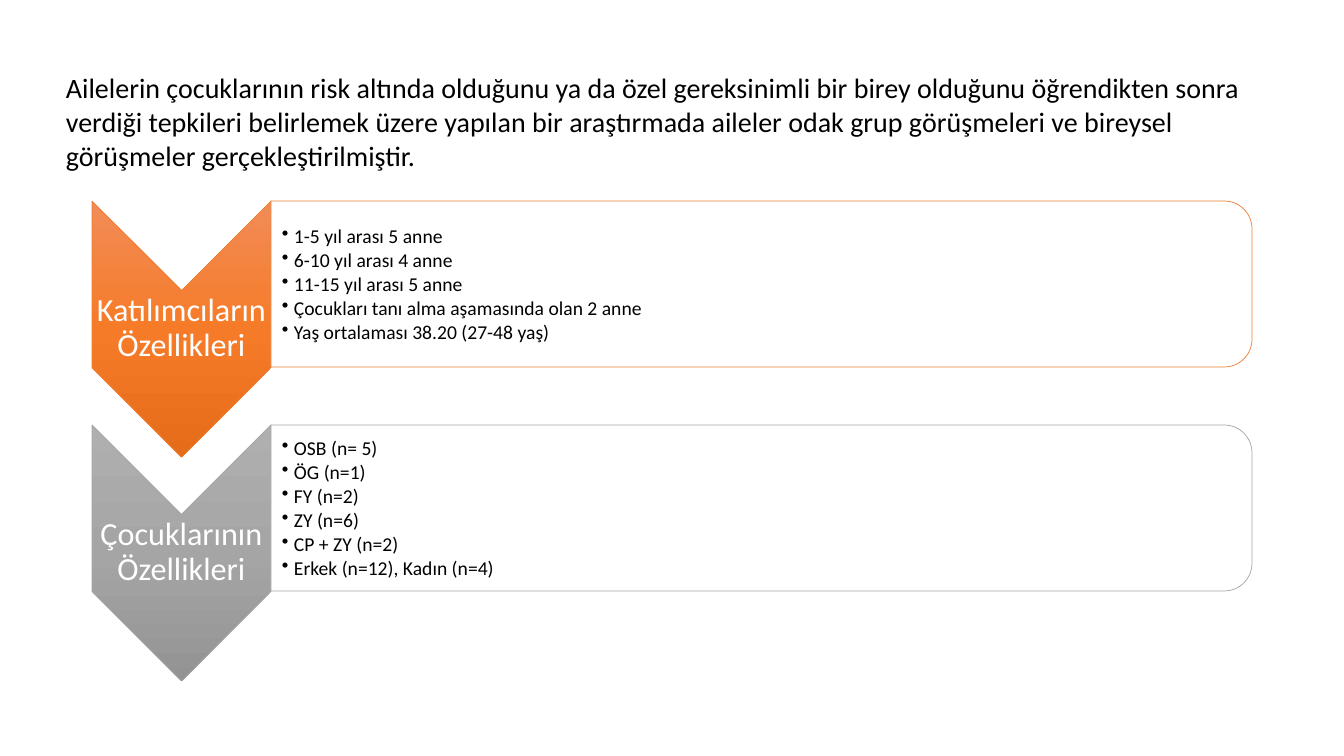
from dataclasses import dataclass

from lxml import etree
from pptx import Presentation
from pptx.dml.color import RGBColor
from pptx.enum.shapes import MSO_SHAPE
from pptx.enum.text import MSO_ANCHOR, PP_ALIGN
from pptx.oxml import parse_xml
from pptx.oxml.ns import nsdecls, qn
from pptx.util import Pt

EMU_PER_PX = 914400 / 100.8


@dataclass(frozen=True)
class Theme:
    font: str = "Calibri"
    black: str = "000000"
    white: str = "FFFFFF"
    orange: str = "ED7D31"
    gray: str = "A5A5A5"
    orange_stops: tuple = ("F18C57", "F67B28", "E56C19")
    gray_stops: tuple = ("AFAFAF", "A5A5A5", "939393")
    intro_size: int = 20
    label_size: int = 23
    item_size: int = 14


THEME = Theme()

INTRO = (
    "Ailelerin çocuklarının risk altında olduğunu ya da özel gereksinimli bir birey "
    "olduğunu öğrendikten sonra verdiği tepkileri belirlemek üzere yapılan bir araştırmada "
    "aileler odak grup görüşmeleri ve bireysel görüşmeler gerçekleştirilmiştir."
)
SECTIONS = [
    ("Katılımcıların Özellikleri", THEME.orange, THEME.orange_stops, [
        "1-5 yıl arası 5 anne",
        "6-10 yıl arası 4 anne",
        "11-15 yıl arası 5 anne",
        "Çocukları tanı alma aşamasında olan 2 anne",
        "Yaş ortalaması 38.20 (27-48 yaş)",
    ]),
    ("Çocuklarının Özellikleri", THEME.gray, THEME.gray_stops, [
        "OSB (n= 5)",
        "ÖG (n=1)",
        "FY (n=2)",
        "ZY (n=6)",
        "CP + ZY (n=2)",
        "Erkek (n=12), Kadın (n=4)",
    ]),
]

# Section grid, in px
LEFT, TOP, PITCH = 92, 201, 224
CHEVRON_W, CHEVRON_H = 179, 256
PANEL_W, PANEL_H = 981, 166


def px(n):
    return round(n * EMU_PER_PX)


def add_turned_shape(slide, kind, x, y, w, h, line_color):
    """Add a shape turned by 90 degrees that covers the box x, y, w, h."""
    shift = (w - h) / 2
    sp = slide.shapes.add_shape(kind, px(x + shift), px(y - shift), px(h), px(w))
    sp.rotation = 90
    sp.shadow.inherit = False
    sp.line.color.rgb = RGBColor.from_string(line_color)
    sp.line.width = Pt(0.5)
    return sp


def add_chevron(slide, x, y, line_color, stops):
    sp = add_turned_shape(slide, MSO_SHAPE.CHEVRON, x, y, CHEVRON_W, CHEVRON_H, line_color)
    marks = "".join(
        f'<a:gs pos="{i * 50000}"><a:srgbClr val="{color}"/></a:gs>'
        for i, color in enumerate(stops)
    )
    # Top-to-bottom gradient, independent of the shape's rotation
    grad = parse_xml(
        f'<a:gradFill {nsdecls("a")} rotWithShape="0"><a:gsLst>{marks}</a:gsLst>'
        '<a:lin ang="5400000" scaled="0"/></a:gradFill>'
    )
    sp.fill.background()
    no_fill = sp._element.spPr.find(qn("a:noFill"))
    no_fill.getparent().replace(no_fill, grad)


def add_panel(slide, x, y, line_color):
    sp = add_turned_shape(slide, MSO_SHAPE.ROUND_2_SAME_RECTANGLE, x, y,
                          PANEL_W, PANEL_H, line_color)
    sp.fill.solid()
    sp.fill.fore_color.rgb = RGBColor.from_string(THEME.white)
    color = sp._element.spPr.find(qn("a:solidFill"))[0]
    etree.SubElement(color, qn("a:alpha")).set("val", "90000")


def add_bullet(p, indent):
    pPr = p._p.get_or_add_pPr()
    pPr.set("marL", str(indent))
    pPr.set("indent", str(-indent))
    etree.SubElement(pPr, qn("a:buChar")).set("char", "•")


def add_text(slide, box, lines, size, color, insets=None, anchor=MSO_ANCHOR.TOP,
             align=PP_ALIGN.LEFT, spacing=None, after=None, bullets=False):
    tb = slide.shapes.add_textbox(*map(px, box))
    tf = tb.text_frame
    tf.word_wrap = True
    tf.vertical_anchor = anchor
    if insets:
        tf.margin_left, tf.margin_top, tf.margin_right, tf.margin_bottom = map(px, insets)
    tf.text = "\n".join(lines)
    for p in tf.paragraphs:
        if bullets:
            add_bullet(p, px(12))
        p.alignment = align
        p.line_spacing = spacing
        p.space_after = after
        for r in p.runs:
            r.font.name = THEME.font
            r.font.size = Pt(size)
            r.font.color.rgb = RGBColor.from_string(color)


def add_section(slide, y, label, line_color, stops, items):
    panel_x = LEFT + CHEVRON_W
    add_chevron(slide, LEFT, y, line_color, stops)
    add_text(slide, (LEFT, y + 89, CHEVRON_W, 77), [label], THEME.label_size, THEME.white,
             (2, 2, 2, 2), MSO_ANCHOR.MIDDLE, PP_ALIGN.CENTER, 0.9)
    add_panel(slide, panel_x, y, line_color)
    add_text(slide, (panel_x, y + 9, 973, 150), items, THEME.item_size, THEME.black,
             (11, 1, 1, 1), MSO_ANCHOR.MIDDLE, spacing=0.9, after=Pt(2), bullets=True)


def main():
    prs = Presentation()
    prs.slide_width, prs.slide_height = px(1344), px(756)
    slide = prs.slides.add_slide(prs.slide_layouts[6])

    # Chevron list
    for i, section in enumerate(SECTIONS):
        add_section(slide, TOP + i * PITCH, *section)

    # Introduction
    add_text(slide, (56, 66, 1243, 112), [INTRO], THEME.intro_size, THEME.black)

    prs.save("out.pptx")


if __name__ == "__main__":
    main()
